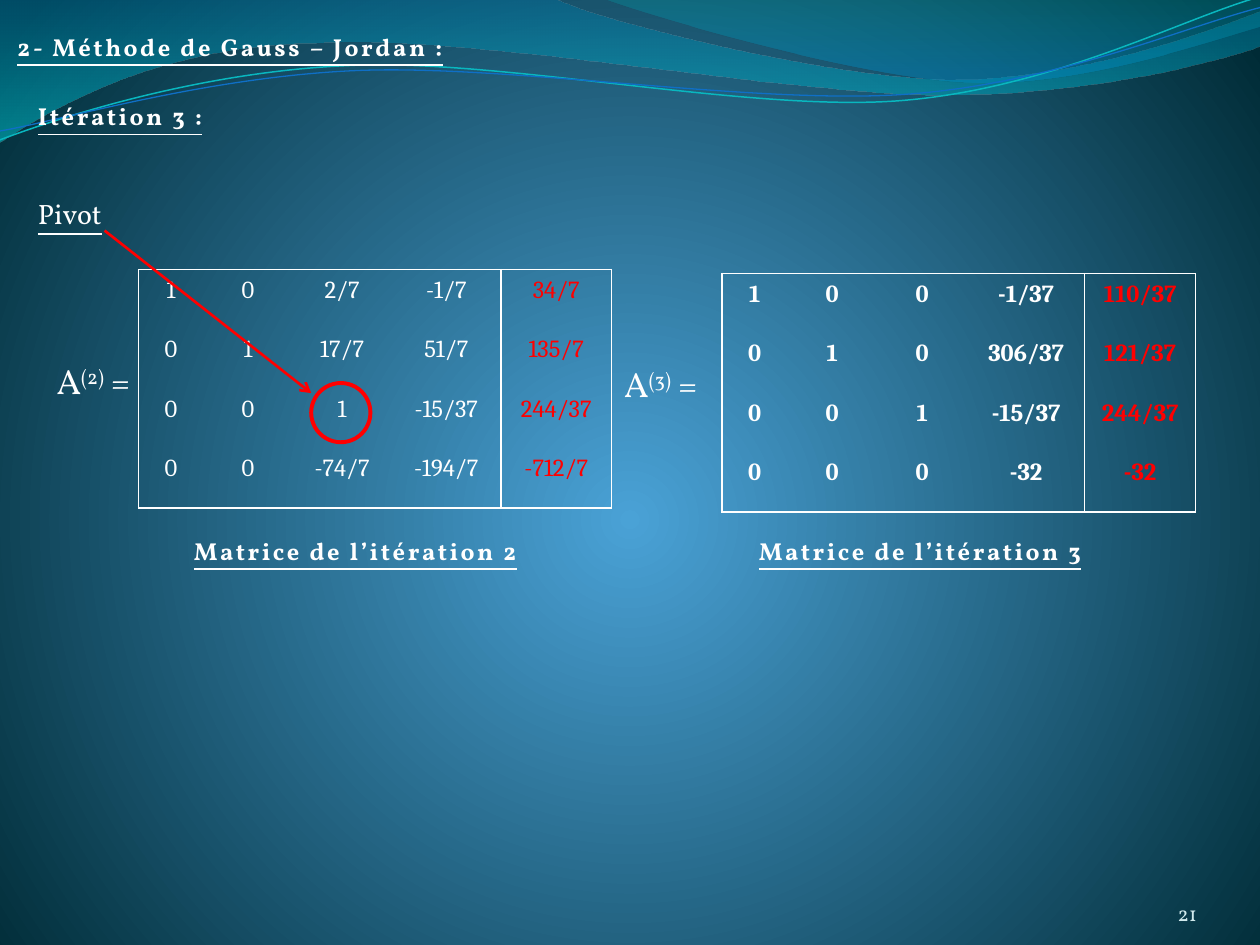
from dataclasses import dataclass
from math import cos, radians, sin

from lxml.etree import SubElement
from pptx import Presentation
from pptx.dml.color import RGBColor
from pptx.enum.shapes import MSO_CONNECTOR, MSO_SHAPE
from pptx.enum.text import MSO_ANCHOR, MSO_AUTO_SIZE, PP_ALIGN
from pptx.oxml import parse_xml
from pptx.oxml.ns import nsdecls, qn
from pptx.util import Inches, Pt


@dataclass(frozen=True)
class Theme:
    text: str = "FFFFFF"
    accent: str = "FF0000"
    number: str = "D1EAED"
    glow: str = "4AA2D6"
    night: str = "002B36"
    body_font: str = "Vollkorn"
    table_font: str = "Cambria"
    small: int = 12
    base: int = 14
    label: int = 16
    symbol: int = 20
    border: float = 0.96


T = Theme()
COLS, ROWS = 100, 75
UNIT = Inches(10) // COLS
PLAIN_TABLE = "{2D5ABB26-0587-4C30-8999-92F81FD0307C}"
HEADING = {"size": Pt(T.base), "bold": True, "underline": True}
MATRIX_ROW = 4.73
TILT = -2.7

# Each wave is a start point followed by cubic (three points) or straight (one point) pieces.
BAND = [[(0, 0)], [(44, -0.1)],
        [(47.6, 1.7), (66.4, 6.3), (75.8, 6.3)], [(85.3, 6.3), (95.8, 2.6), (100, 0.9)],
        [(100.1, 3.6)],
        [(98.3, 4.4), (87, 7.6), (74.6, 7.5)], [(62.2, 7.5), (38.2, 2.8), (25.7, 3.4)],
        [(12.9, 3.5), (4.6, 8.3), (-0.1, 11.3)]]
CREST = [[(47.9, -0.1)], [(50.9, 1.1), (68.2, 6.2), (76.9, 6.5)],
         [(85.6, 6.9), (96.1, 3.2), (100, 2.1)], [(100, 0)]]
TEAL_LINE = [[(0, 11.1)], [(4.8, 9.3), (15.8, 5.7), (27.7, 5.2)],
             [(39.5, 4.6), (59.3, 8.9), (71.3, 8)], [(83.3, 7.1), (93.8, 1.5), (99.8, -0.2)]]
BLUE_LINE = [[(0, 10.4)], [(4.7, 9.6), (16.4, 6.1), (28.3, 5.6)],
             [(40.3, 5.1), (59.7, 8.3), (71.7, 7.5)], [(83.6, 6.7), (94.1, 2.1), (100, 0.6)]]

MATRIX_2 = ["1 0 2/7 -1/7 34/7", "0 1 17/7 51/7 135/7",
            "0 0 1 -15/37 244/37", "0 0 -74/7 -194/7 -712/7"]
MATRIX_3 = ["1 0 0 -1/37 110/37", "0 1 0 306/37 121/37",
            "0 0 1 -15/37 244/37", "0 0 0 -32 -32"]


def grid(*values):
    return [round(v * UNIT) for v in values]


def set_gradient(holder, stops, shade):
    """Replace the solid fill in holder; a stop is (position, colour, opacity), in percent."""
    marks = "".join(
        f'<a:gs pos="{pos * 1000}"><a:srgbClr val="{color}">'
        f'<a:alpha val="{alpha * 1000}"/></a:srgbClr></a:gs>' for pos, color, alpha in stops)
    holder.replace(holder.find(qn("a:solidFill")), parse_xml(
        f'<a:gradFill {nsdecls("a")} rotWithShape="1"><a:gsLst>{marks}</a:gsLst>{shade}</a:gradFill>'))


def set_line(line, color, width):
    line.color.rgb = RGBColor.from_string(color)
    line.width = Pt(width)


def add_background(s):
    s.background.fill.solid()
    set_gradient(s.background._cSld.bg.bgPr, [(0, T.glow, 100), (100, T.night, 100)],
                 '<a:path path="circle"><a:fillToRect l="50000" t="55000" r="50000" b="45000"/></a:path>')


def add_wave(s, wave, closed):
    """Outline through all points, whose groups of three become Bezier curves."""
    first, *rest = [grid(*point) for piece in wave for point in piece]
    builder = s.shapes.build_freeform(*first)
    builder.add_line_segments(rest, close=closed)
    sp = builder.convert_to_shape()
    sp.shadow.inherit = False
    segments = iter(list(sp._element.iter(qn("a:lnTo"))))
    for piece in wave[1:]:
        group = [next(segments) for _ in piece]
        if len(group) == 3:
            curve = parse_xml(f'<a:cubicBezTo {nsdecls("a")}/>')
            group[0].addprevious(curve)
            for segment in group:
                curve.append(segment[0])
                segment.getparent().remove(segment)
    return sp


def add_filled_wave(s, wave, stops, angle):
    sp = add_wave(s, wave, closed=True)
    sp.line.fill.background()
    sp.fill.solid()
    set_gradient(sp._element.spPr, stops, f'<a:lin ang="{angle * 60000}" scaled="0"/>')


def level(wave, center):
    """Turn a wave back by TILT about its center."""
    cx, cy = center
    c, n = cos(radians(-TILT)), sin(radians(-TILT))
    return [[(cx + (x - cx) * c - (y - cy) * n, cy + (x - cx) * n + (y - cy) * c)
             for x, y in piece] for piece in wave]


def add_line_wave(s, wave, center, color, width):
    sp = add_wave(s, level(wave, center), closed=False)
    sp.rotation = TILT
    sp.fill.background()
    set_line(sp.line, color, width)


def add_run(p, text, fmt, color=T.text, font=T.body_font, **extra):
    """Add a run; extra holds run attributes such as spc and baseline."""
    r = p.add_run()
    r.text = text
    r.font.name = font
    r.font.color.rgb = RGBColor.from_string(color)
    for name, value in fmt.items():
        setattr(r.font, name, value)
    for name, value in extra.items():
        r.font._element.set(name, str(value))


def add_box(s, *place):
    tf = s.shapes.add_textbox(*grid(*place)).text_frame
    tf.word_wrap = True
    tf.auto_size = MSO_AUTO_SIZE.SHAPE_TO_FIT_TEXT
    return tf


def add_heading(s, text, left, top, width):
    add_run(add_box(s, left, top, width, 3.3).paragraphs[0], text, HEADING, spc=150)


def add_matrix_name(s, exponent, left, top, width):
    p = add_box(s, left, top, width, 4.4).paragraphs[0]
    fmt = {"size": Pt(T.symbol)}
    add_run(p, "A", fmt)
    add_run(p, f"({exponent})", fmt, baseline=30000)
    add_run(p, " =", fmt)


def add_page_number(s, number):
    tf = add_box(s, 86.7, 69.5, 8.3, 4)
    frame = dict.fromkeys(("margin_left", "margin_right", "margin_top", "margin_bottom"), 0)
    frame |= {"auto_size": MSO_AUTO_SIZE.NONE, "vertical_anchor": MSO_ANCHOR.BOTTOM}
    for name, value in frame.items():
        setattr(tf, name, value)
    p = tf.paragraphs[0]
    p.alignment = PP_ALIGN.RIGHT
    add_run(p, number, {"size": Pt(T.small)}, T.number)


def set_borders(cell, sides):
    tcPr = cell._tc.get_or_add_tcPr()
    for side in "LRTB":
        if side in sides:
            ln = SubElement(tcPr, qn(f"a:ln{side}"), w=str(Pt(T.border)))
            fill = SubElement(ln, qn("a:solidFill"))
            SubElement(fill, qn("a:srgbClr"), val=T.text)


def add_matrix(s, lines, left, top, widths, bold):
    """Boxed matrix whose last column, the right-hand side, is ruled off and red."""
    values = [line.split() for line in lines]
    rows, cols = len(values), len(widths)
    frame = s.shapes.add_table(rows, cols, *grid(left, top, sum(widths), rows * MATRIX_ROW))
    table = frame.table
    table.first_row = table.horz_banding = False
    table._tbl.tblPr.find(qn("a:tableStyleId")).text = PLAIN_TABLE
    for column, width in zip(table.columns, grid(*widths)):
        column.width = width
    for i, row in enumerate(values):
        for j, value in enumerate(row):
            cell = table.cell(i, j)
            edges = {"L": j in (0, cols - 1), "R": j >= cols - 2, "T": i == 0, "B": i == rows - 1}
            set_borders(cell, [side for side, ruled in edges.items() if ruled])
            cell.fill.background()
            p = cell.text_frame.paragraphs[0]
            p.alignment = PP_ALIGN.CENTER
            add_run(p, value, {"size": Pt(T.base), "bold": bold},
                    T.accent if j == cols - 1 else T.text, T.table_font)


def add_pivot_mark(s):
    sp = s.shapes.add_shape(MSO_SHAPE.OVAL, *grid(24.7, 30.4, 4.7, 4.7))
    sp.shadow.inherit = False
    sp.fill.background()
    set_line(sp.line, T.accent, 2.25)
    arrow = s.shapes.add_connector(MSO_CONNECTOR.STRAIGHT, *grid(8.3, 18.3, 24.7, 31.2))
    set_line(arrow.line, T.accent, 1.5)
    SubElement(arrow.line._get_or_add_ln(), qn("a:tailEnd"), type="arrow")
    SubElement(arrow._element.spPr, qn("a:effectLst"))


def main():
    prs = Presentation()
    prs.slide_width, prs.slide_height = grid(COLS, ROWS)
    s = prs.slides.add_slide(prs.slide_layouts[6])
    add_background(s)
    add_filled_wave(s, BAND, [(0, "0074A0", 45), (100, "00C4CD", 55)], 90)
    add_filled_wave(s, CREST, [(20, "008ABF", 45), (100, "00A0A8", 30)], 270)
    add_line_wave(s, TEAL_LINE, (49.9, 5.75), "09B7BF", 0.85)
    add_line_wave(s, BLUE_LINE, (49.95, 5.9), "0F6FC6", 0.75)

    add_matrix(s, MATRIX_2, 11, 21.4, (5.16, 7.06, 7.88, 8.66, 8.8), bold=False)
    add_run(add_box(s, 2.03, 15.1, 9.1, 3.6).paragraphs[0], "Pivot",
            {"size": Pt(T.label), "underline": True})
    add_heading(s, "2- Méthode de Gauss – Jordan :", 0.4, 2.06, 36.8)
    add_heading(s, "Itération 3 :", 2.03, 7.56, 21.2)
    add_matrix_name(s, 2, 3.5, 28.05, 8.5)
    add_matrix_name(s, 3, 48.55, 28.3, 9)
    add_page_number(s, "21")
    add_pivot_mark(s)
    add_heading(s, "Matrice de l’itération 2", 14.4, 42.03, 27.7)
    add_heading(s, "Matrice de l’itération 3", 59.24, 42.06, 27.6)
    add_matrix(s, MATRIX_3, 57.3, 21.72, (5.2, 7.1, 7.2, 9.3, 8.8), bold=True)
    prs.save("out.pptx")


if __name__ == "__main__":
    main()
